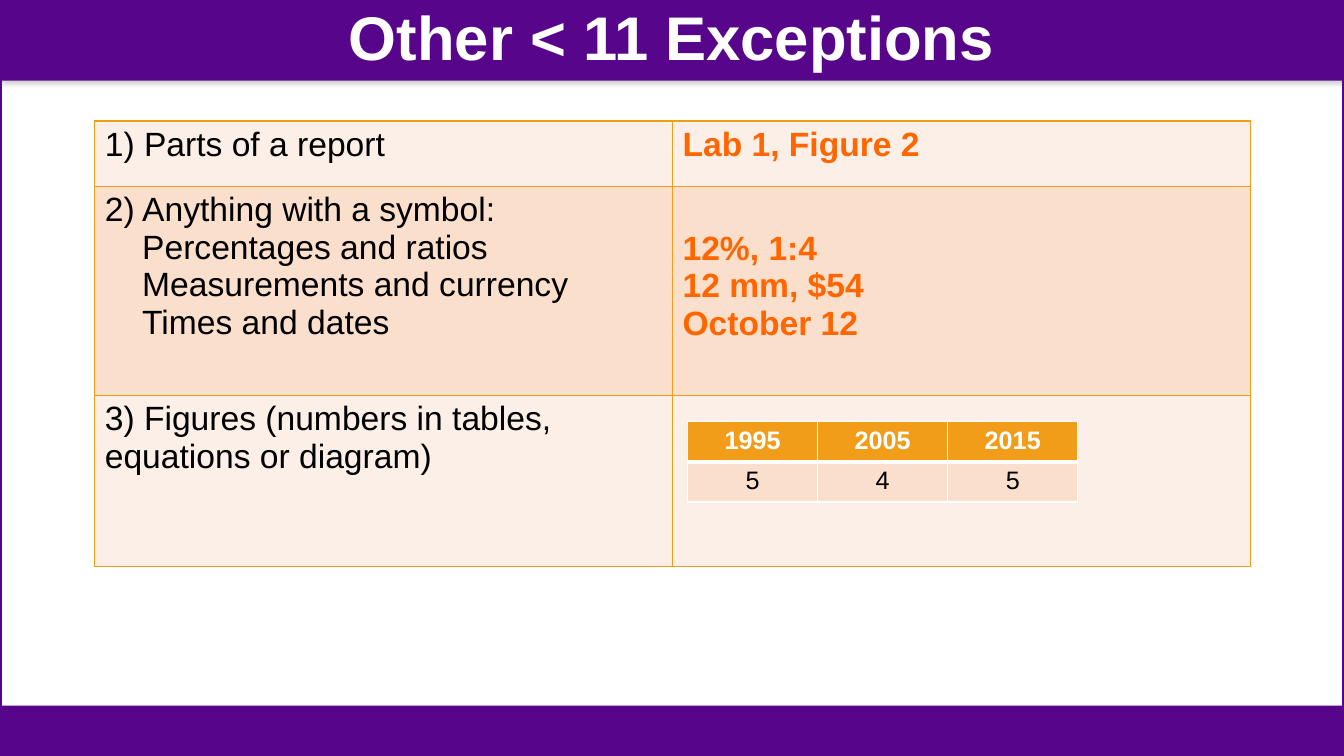
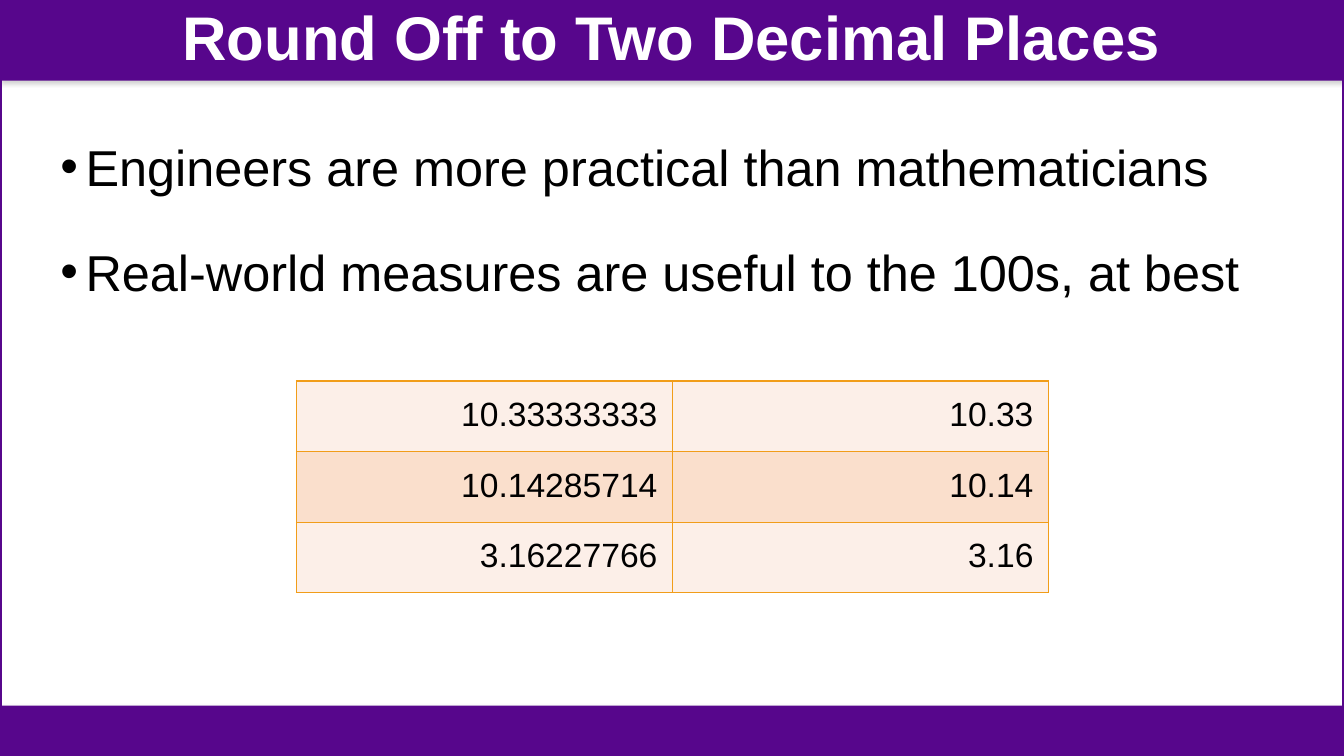
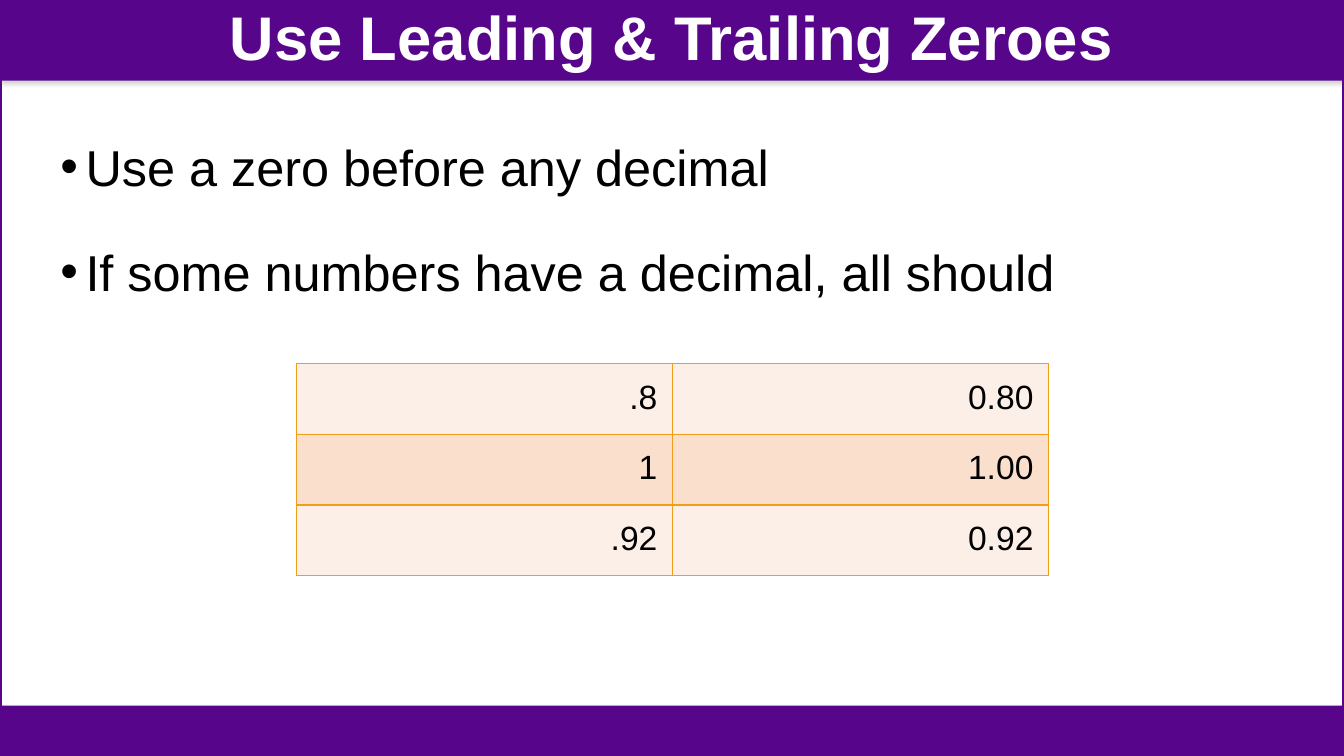
from lxml import etree
from pptx import Presentation
from pptx.dml.color import RGBColor
from pptx.enum.shapes import MSO_SHAPE
from pptx.enum.text import MSO_ANCHOR, PP_ALIGN
from pptx.oxml import parse_xml
from pptx.oxml.ns import nsdecls, qn
from pptx.util import Inches, Pt

PURPLE = RGBColor(0x57, 0x06, 0x8C)
GOLD = RGBColor(0xF1, 0x9D, 0x19)
ORANGE = RGBColor(0xFF, 0x66, 0x00)
PALE = RGBColor(0xFC, 0xEF, 0xE8)
PEACH = RGBColor(0xFA, 0xDF, 0xCC)
WHITE = RGBColor(0xFF, 0xFF, 0xFF)
BLACK = RGBColor(0, 0, 0)
FONT = "Arial"
WIDTH, HEIGHT = 13.33, 7.5
TITLE_HEIGHT, FOOTER_HEIGHT = 0.8, 0.5
SYMBOL_INDENT = 0.37
LINE_HEIGHT = 0.38

EXCEPTIONS = [
    (["1) Parts of a report"], ["Lab 1, Figure 2"]),
    (["2) Anything with a symbol:", "Percentages and ratios",
      "Measurements and currency", "Times and dates"],
     ["12%, 1:4", "12 mm, $54", "October 12"]),
    (["3) Figures (numbers in tables, equations or diagram)"], []),
]
YEARS = [(["1995"], ["2005"], ["2015"]), (["5"], ["4"], ["5"])]
NUMBER_PAGES = [
    {"title": "Round Off to Two Decimal Places",
     "bullets": ["Engineers are more practical than mathematicians",
                 "Real-world measures are useful to the 100s, at best"],
     "numbers": [(["10.33333333"], ["10.33"]), (["10.14285714"], ["10.14"]),
                 (["3.16227766"], ["3.16"])],
     "top": 3.78},
    {"title": "Use Leading & Trailing Zeroes",
     "bullets": ["Use a zero before any decimal",
                 "If some numbers have a decimal, all should"],
     "numbers": [([".8"], ["0.80"]), (["1"], ["1.00"]), ([".92"], ["0.92"])],
     "top": 3.61},
]


def set_font(paragraph, size, color, bold=False):
    font = paragraph.font
    font.name, font.size, font.bold = FONT, Pt(size), bold
    font.color.rgb = color


def add_rectangle(page, top, height):
    box = page.shapes.add_shape(MSO_SHAPE.RECTANGLE, 0, Inches(top),
                                Inches(WIDTH), Inches(height))
    box.shadow.inherit = False
    return box


def add_band(page, top, height):
    band = add_rectangle(page, top, height)
    band.fill.solid()
    band.fill.fore_color.rgb = PURPLE
    band.line.fill.background()
    effects = band._element.spPr.find(qn("a:effectLst"))
    effects.append(parse_xml(
        f'<a:outerShdw {nsdecls("a")} blurRad="{Pt(3.1)}" dist="{Pt(1.8)}" '
        'dir="5400000" rotWithShape="0"><a:srgbClr val="808080">'
        '<a:alpha val="35000"/></a:srgbClr></a:outerShdw>'))


def add_text_box(page, top, height):
    box = page.shapes.add_textbox(0, Inches(top), Inches(WIDTH), Inches(height))
    box.text_frame.word_wrap = True
    return box.text_frame


def add_page(deck, title):
    page = deck.slides.add_slide(deck.slide_layouts[6])
    add_band(page, 0, TITLE_HEIGHT)
    frame = add_rectangle(page, 0, HEIGHT)
    frame.fill.background()
    frame.line.color.rgb = PURPLE
    frame.line.width = Pt(2.25)
    add_band(page, HEIGHT - FOOTER_HEIGHT, FOOTER_HEIGHT)
    text = add_text_box(page, 0, TITLE_HEIGHT)
    text.vertical_anchor = MSO_ANCHOR.MIDDLE
    paragraph = text.paragraphs[0]
    paragraph.text = title
    paragraph.alignment = PP_ALIGN.CENTER
    paragraph.line_spacing = 0.9
    set_font(paragraph, 44, WHITE, True)
    return page


def set_borders(cell, color, **widths):
    properties = cell._tc.get_or_add_tcPr()
    for index, side in enumerate("LRTB"):
        properties.insert(index, parse_xml(
            f'<a:ln{side} {nsdecls("a")} w="{Pt(widths.get(side, 1))}"><a:solidFill>'
            f'<a:srgbClr val="{color}"/></a:solidFill></a:ln{side}>'))


def add_grid(page, rows, left, top, column_width, heights, size, align,
             fills, border, margins=(0.1, 0.05)):
    columns = len(rows[0])
    table = page.shapes.add_table(
        len(rows), columns, Inches(left), Inches(top),
        Inches(column_width * columns), Inches(sum(heights))).table
    table.first_row = table.horz_banding = False
    for column in table.columns:
        column.width = Inches(column_width)
    for row, (values, height) in enumerate(zip(rows, heights)):
        table.rows[row].height = Inches(height)
        for column, lines in enumerate(values):
            cell = table.cell(row, column)
            cell.fill.solid()
            cell.fill.fore_color.rgb = fills[row % len(fills)]
            cell.margin_left = cell.margin_right = Inches(margins[0])
            cell.margin_top = cell.margin_bottom = Inches(margins[1])
            set_borders(cell, border)
            cell.text = "\n".join(lines)
            for paragraph in cell.text_frame.paragraphs:
                paragraph.alignment = align
                set_font(paragraph, size, BLACK)
    return table


def add_bullets(page, lines):
    text = add_text_box(page, 1, 5.84)
    text.text = "\n".join(lines)
    for index, paragraph in enumerate(text.paragraphs):
        properties = paragraph._p.get_or_add_pPr()
        properties.set("marL", str(Inches(0.75)))
        properties.set("indent", str(Inches(-0.25)))
        paragraph.line_spacing = 1.5
        if index:
            paragraph.space_before = Pt(10)
        bullet_font = etree.SubElement(properties, qn("a:buFont"))
        bullet_font.set("typeface", FONT)
        etree.SubElement(properties, qn("a:buChar")).set("char", "•")
        set_font(paragraph, 36, BLACK)


def add_exceptions_page(deck):
    page = add_page(deck, "Other < 11 Exceptions")
    table = add_grid(page, EXCEPTIONS, 0.94, 1.2, 5.73, [0.65, 2.07, 1.7], 24,
                     PP_ALIGN.LEFT, [PALE, PEACH], GOLD)
    for row in range(2):
        for paragraph in table.cell(row, 1).text_frame.paragraphs:
            set_font(paragraph, 24, ORANGE, True)
    for paragraph in table.cell(1, 0).text_frame.paragraphs[1:]:
        paragraph._p.get_or_add_pPr().set("marL", str(Inches(SYMBOL_INDENT)))
    table.cell(1, 1).margin_top = Inches(0.05 + LINE_HEIGHT)

    years = add_grid(page, YEARS, 6.82, 4.18, 1.29, [0.4, 0.4], 18,
                     PP_ALIGN.CENTER, [GOLD, PEACH], WHITE)
    for column in range(len(YEARS[0])):
        header = years.cell(0, column)
        set_font(header.text_frame.paragraphs[0], 18, WHITE, True)
        for cell, side in ((header, "B"), (years.cell(1, column), "T")):
            cell._tc.tcPr.find(qn(f"a:ln{side}")).set("w", str(Pt(3)))


def add_numbers_page(deck, content):
    page = add_page(deck, content["title"])
    add_bullets(page, content["bullets"])
    add_grid(page, content["numbers"], 2.94, content["top"], 3.73, [0.7] * 3, 24,
             PP_ALIGN.RIGHT, [PALE, PEACH], GOLD, margins=(0.15, 0.15))


def main():
    deck = Presentation()
    deck.slide_width, deck.slide_height = Inches(WIDTH), Inches(HEIGHT)
    add_exceptions_page(deck)
    for content in NUMBER_PAGES:
        add_numbers_page(deck, content)
    deck.save("out.pptx")


if __name__ == "__main__":
    main()
